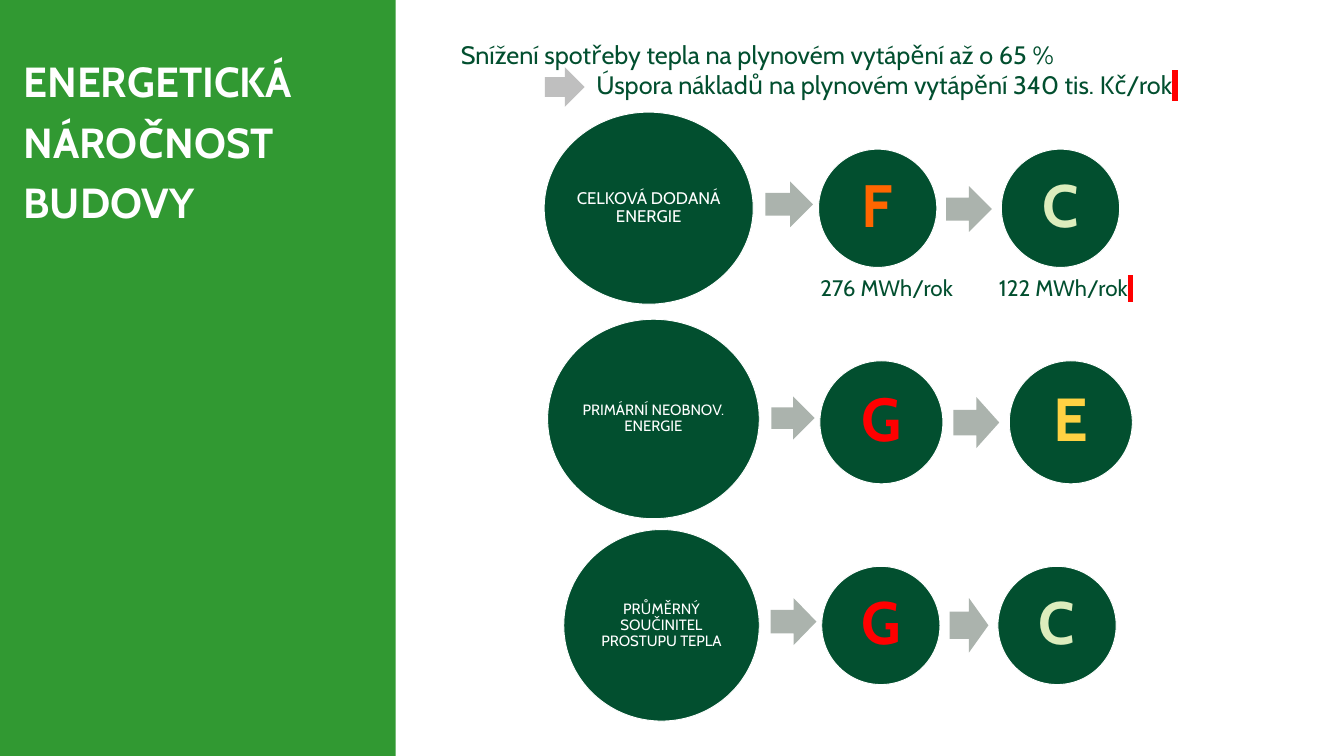
"""Builds the slide on the energy performance of a building."""
from pptx import Presentation
from pptx.dml.color import RGBColor as Rgb
from pptx.enum.shapes import MSO_SHAPE as Shape
from pptx.enum.text import MSO_ANCHOR as Anchor, MSO_AUTO_SIZE as AutoSize, PP_ALIGN as Align
from pptx.oxml.ns import qn
from pptx.util import Cm, Pt
from lxml.etree import SubElement

COLORS = {
    "panel": "319932", "dark": "024F2F", "white": "FFFFFF", "arrow": "ABB3AD",
    "pale_arrow": "BFBFBF", "mark": "FF0000",
    "C": "DDEDBD", "E": "FFD243", "F": "FF6600", "G": "FF0000",
}
FONT = "Cabin"


def set_values(target, values):
    for name, value in values.items():
        setattr(target, name, value)


class SlideBuilder:
    def __init__(self, slide):
        self.slide = slide

    def add_text(self, paragraph, text, size, color, bold=False):
        run = paragraph.add_run()
        run.text = text
        set_values(run.font, {"name": FONT, "size": Pt(size), "bold": bold})
        run.font.color.rgb = Rgb.from_string(COLORS[color])
        return run

    def frame(self, shape, margin_x, margin_y, anchor):
        frame = shape.text_frame
        set_values(frame, {
            "word_wrap": True, "auto_size": AutoSize.NONE, "vertical_anchor": anchor,
            "margin_left": Cm(margin_x), "margin_right": Cm(margin_x),
            "margin_top": Cm(margin_y), "margin_bottom": Cm(margin_y),
        })
        return frame

    def shape(self, kind, box, fill, outlined=False):
        shape = self.slide.shapes.add_shape(kind, *map(Cm, box))
        shape.shadow.inherit = False
        shape.fill.solid()
        shape.fill.fore_color.rgb = Rgb.from_string(COLORS[fill])
        if outlined:
            shape.line.color.rgb = Rgb.from_string(COLORS["white"])
            shape.line.width = Pt(1)
        else:
            shape.line.fill.background()
        return shape

    def title(self, text, box):
        title = self.slide.shapes.title
        set_values(title, dict(zip(("left", "top", "width", "height"), map(Cm, box))))
        paragraph = self.frame(title, 0.38, 0.18, Anchor.TOP).paragraphs[0]
        set_values(paragraph, {"alignment": Align.LEFT, "line_spacing": 1.2})
        self.add_text(paragraph, text, 45, "white", bold=True)

    def panel(self, box):
        panel = self.shape(Shape.RECTANGLE, box, "panel")
        self.slide.shapes.title._element.addprevious(panel._element)

    def arrow(self, box, fill="arrow"):
        self.shape(Shape.RIGHT_ARROW, box, fill)

    def circle(self, box, text, size, color, margin, bold=False):
        circle = self.shape(Shape.OVAL, box, "dark", outlined=True)
        paragraph = self.frame(circle, margin, margin, Anchor.MIDDLE).paragraphs[0]
        set_values(paragraph, {"alignment": Align.CENTER, "line_spacing": 0.9})
        self.add_text(paragraph, text, size, color, bold)

    def note(self, box, lines, size, indent=0, tab=None):
        note = self.slide.shapes.add_textbox(*map(Cm, box))
        frame = self.frame(note, 0.25, 0.13, Anchor.TOP)
        for index, line in enumerate(lines):
            paragraph = frame.add_paragraph() if index else frame.paragraphs[0]
            paragraph.alignment = Align.LEFT
            properties = paragraph._p.get_or_add_pPr()
            properties.set("marL", str(Cm(indent * index)))
            if tab:
                stops = SubElement(properties, qn("a:tabLst"))
                SubElement(stops, qn("a:tab"), pos=str(Cm(tab)), algn="l")
            self.add_text(paragraph, line, size, "dark")
        mark = self.add_text(paragraph, " ", size, "dark")
        run_properties = mark._r.get_or_add_rPr()
        highlight = SubElement(run_properties, qn("a:highlight"))
        SubElement(highlight, qn("a:srgbClr"), val=COLORS["mark"])
        run_properties.find(qn("a:latin")).addprevious(highlight)


INDICATORS = [
    {"label": "CELKOVÁ DODANÁ ENERGIE", "size": 18, "box": (20.57, 4.24, 7.9, 7.26),
     "arrows": [(28.93, 6.86, 1.8, 1.73), (35.76, 7.04, 1.73, 1.73)],
     "grades": "FC", "grade_size": 64, "lefts": (30.94, 37.85), "top": 5.64, "diameter": 4.47},
    {"label": "PRIMÁRNÍ NEOBNOV. ENERGIE", "size": 16, "box": (20.7, 12.07, 8, 7.54),
     "arrows": [(29.16, 14.99, 1.63, 1.63), (36.04, 15.01, 1.73, 1.93)],
     "grades": "GE", "grade_size": 65, "lefts": (30.99, 38.15), "top": 13.64, "diameter": 4.65},
    {"label": "PRŮMĚRNÝ SOUČINITEL PROSTUPU TEPLA", "size": 16, "box": (21.31, 20.02, 7.39, 7.24),
     "arrows": [(29.13, 22.61, 1.73, 1.78), (35.89, 22.61, 1.47, 2.06)],
     "grades": "GC", "grade_size": 64, "lefts": (31.06, 37.72), "top": 21.41, "diameter": 4.47},
]


def main():
    deck = Presentation()
    set_values(deck, {"slide_width": Cm(50.8), "slide_height": Cm(28.58)})
    builder = SlideBuilder(deck.slides.add_slide(deck.slide_layouts[5]))

    builder.panel((0, 0, 14.96, 28.58))
    builder.title("ENERGETICKÁ NÁROČNOST BUDOVY", (0.51, 1.55, 13.67, 19.94))

    for row in INDICATORS:
        builder.circle(row["box"], row["label"], row["size"], "white", 0.06)
        for arrow, grade, left in zip(row["arrows"], row["grades"], row["lefts"]):
            builder.arrow(arrow)
            box = (left, row["top"], row["diameter"], row["diameter"])
            builder.circle(box, grade, row["grade_size"], grade, 0.23, bold=True)

    savings = ["Snížení spotřeby tepla na plynovém vytápění až o 65 %",
               "Úspora nákladů na plynovém vytápění 340 tis. Kč/rok"]
    builder.note((17.17, 1.35, 33, 4.11), savings, 27, indent=5.12)
    builder.arrow((20.6, 2.54, 1.5, 1.5), "pale_arrow")
    builder.note((30.76, 10.24, 13.8, 2.82), ["276 MWh/rok\t122 MWh/rok"], 24, tab=6.75)

    deck.save("out.pptx")


if __name__ == "__main__":
    main()
